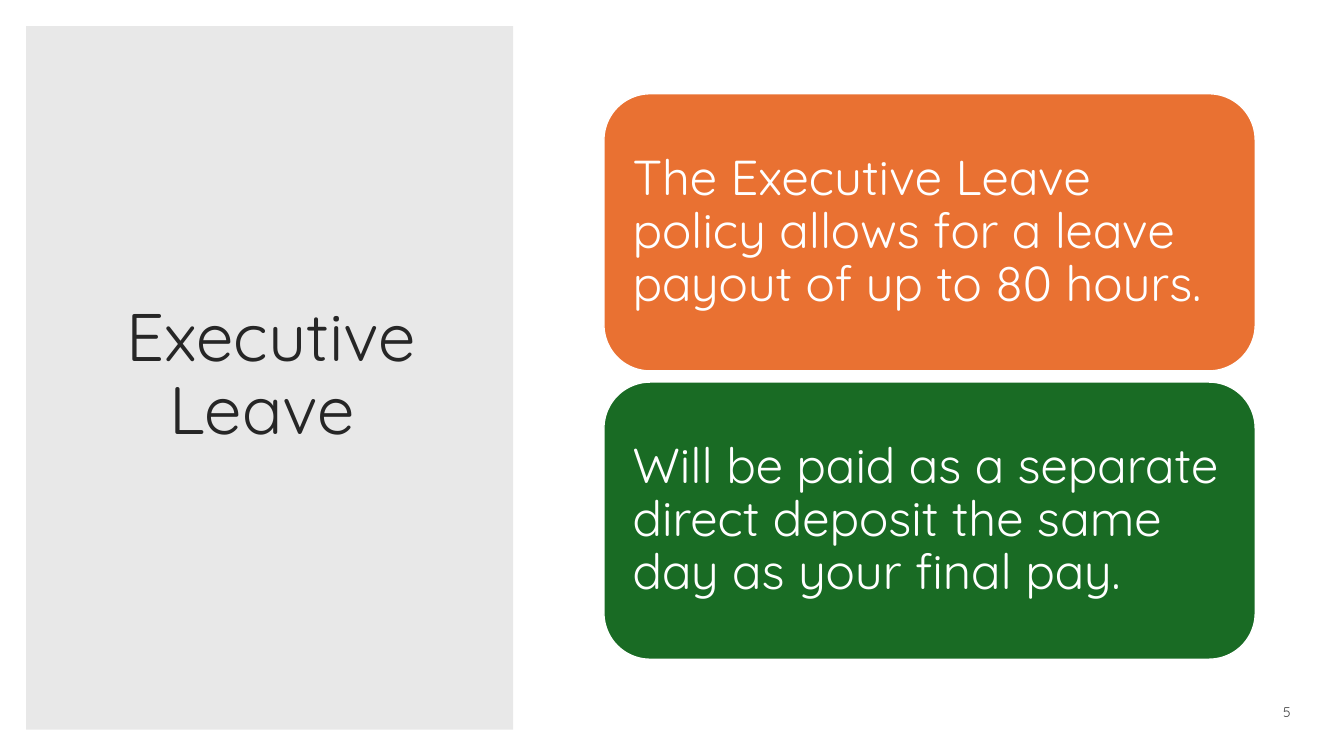
"""Build the Executive Leave slide: a grey title panel beside two policy cards."""
from pptx import Presentation
from pptx.dml.color import RGBColor
from pptx.enum.shapes import MSO_SHAPE
from pptx.enum.text import MSO_ANCHOR, PP_ALIGN
from pptx.util import Inches, Pt

COLORS = {
    "panel": "E8E8E8", "title": "262626", "number": "404040",
    "orange": "E97132", "green": "196B24", "white": "FFFFFF",
}
CARDS = [
    ("orange", "The Executive Leave policy allows for a leave payout of up to 80 hours."),
    ("green", "Will be paid as a separate direct deposit the same day as your final pay."),
]


def box(kind, left, top, width, height, color):
    shape = slide.shapes.add_shape(
        kind, Inches(left), Inches(top), Inches(width), Inches(height))
    shape.shadow.inherit = False
    shape.fill.solid()
    shape.fill.fore_color.rgb = RGBColor.from_string(COLORS[color])
    return shape


def write(shape, text, size, color, align, anchor):
    frame = shape.text_frame
    frame.text = text
    frame.word_wrap = True
    frame.vertical_anchor = anchor
    para = frame.paragraphs[0]
    para.alignment = align
    para.font.name = "Quicksand"
    para.font.size = Pt(size)
    para.font.color.rgb = RGBColor.from_string(COLORS[color])
    return frame, para


deck = Presentation()
deck.slide_width, deck.slide_height = Inches(13.33), Inches(7.5)
slide = deck.slides.add_slide(deck.slide_layouts[5])

panel = box(MSO_SHAPE.RECTANGLE, 0.26, 0.26, 4.83, 6.98, "panel")
panel.line.fill.background()

title = slide.shapes.title
title.left, title.top = Inches(0.63), Inches(0.61)
title.width, title.height = Inches(4.12), Inches(6.24)
frame, para = write(title, "Executive Leave ", 48, "title",
                    PP_ALIGN.CENTER, MSO_ANCHOR.MIDDLE)
para.line_spacing = 0.9
panel._element.addnext(title._element)

top, height, gap = 0.93, 2.75, 0.11
for row, (color, text) in enumerate(CARDS):
    card = box(MSO_SHAPE.ROUNDED_RECTANGLE, 5.99, top + row * (height + gap),
               6.46, height, color)
    card.line.color.rgb = RGBColor.from_string(COLORS["white"])
    card.line.width = Pt(1)
    frame, para = write(card, text, 35, "white", PP_ALIGN.LEFT, MSO_ANCHOR.MIDDLE)
    frame.margin_left = frame.margin_right = Inches(0.15)
    frame.margin_top = frame.margin_bottom = Inches(0.15)
    para.line_spacing = 0.9

number = slide.shapes.add_textbox(Inches(12), Inches(6.9), Inches(0.9), Inches(0.3))
frame, para = write(number, "5", 10, "number", PP_ALIGN.RIGHT, MSO_ANCHOR.BOTTOM)
para.space_after = Pt(6)

deck.save("out.pptx")
